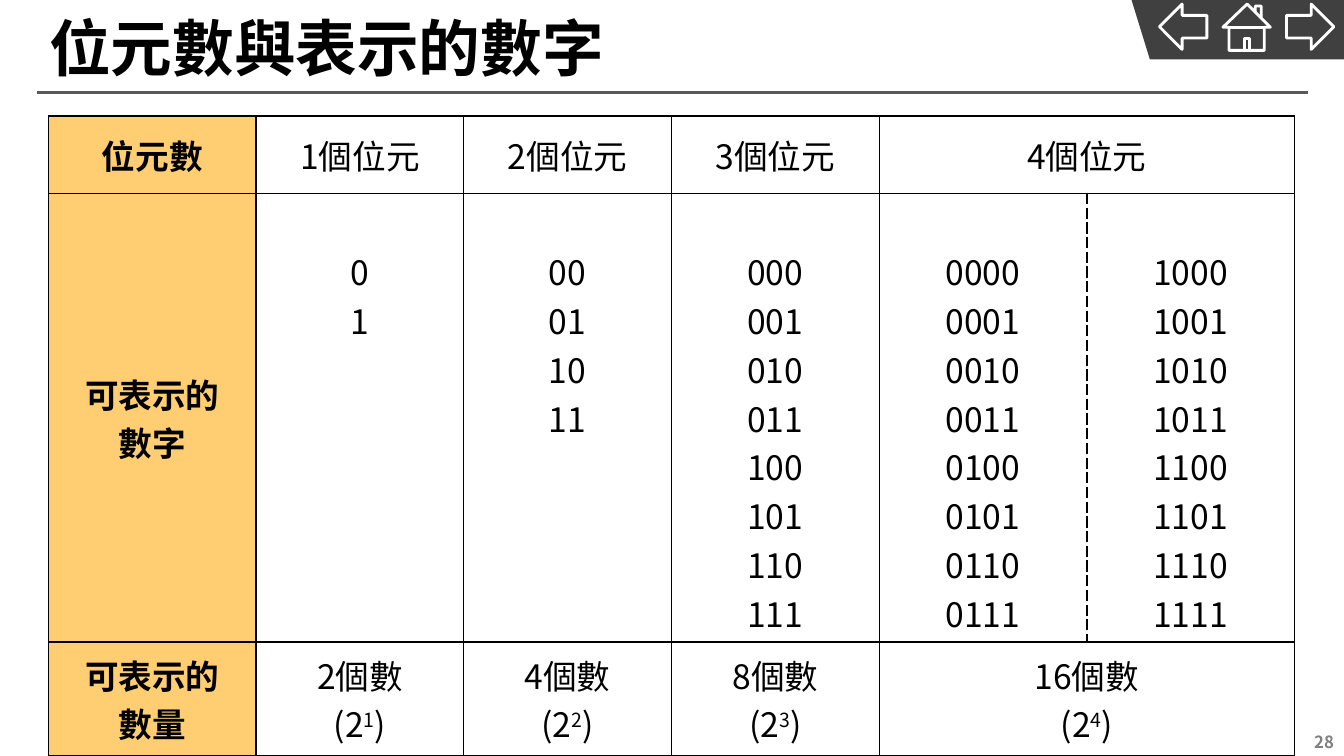
from dataclasses import dataclass

from lxml.etree import SubElement
from pptx import Presentation
from pptx.dml.color import RGBColor
from pptx.enum.shapes import MSO_CONNECTOR, MSO_SHAPE
from pptx.enum.text import MSO_ANCHOR, PP_ALIGN
from pptx.oxml import parse_xml
from pptx.oxml.ns import nsdecls, qn
from pptx.util import Inches, Pt


@dataclass(frozen=True)
class Theme:
    font: str = "Noto Sans CJK SC"
    page_font: str = "Noto Sans CJK TC"
    ink: str = "000000"
    paper: str = "FFFFFF"
    head: str = "FFCE72"
    bar: str = "404040"
    rule: str = "595959"
    page: str = "7F7F7F"
    title_size: int = 44
    cell_size: int = 24
    page_size: int = 12


THEME = Theme()


def rgb(code):
    return RGBColor.from_string(code)


def style(frame, size, color, bold=False, align=PP_ALIGN.LEFT, font=THEME.font):
    """Format every run in a text frame, for Latin and East Asian text."""
    for para in frame.paragraphs:
        para.alignment = align
        for run in para.runs:
            run.font.size = Pt(size)
            run.font.bold = bold
            run.font.color.rgb = rgb(color)
            run.font.name = font
            if run.font._element.find(qn("a:ea")) is None:
                SubElement(run.font._element, qn("a:ea")).set("typeface", font)


def add_text(slide, box, text, inset=0.1, **look):
    shape = slide.shapes.add_textbox(*map(Inches, box))
    frame = shape.text_frame
    frame.word_wrap = True
    frame.vertical_anchor = MSO_ANCHOR.MIDDLE
    frame.margin_left = frame.margin_right = Inches(inset)
    frame.text = text
    style(frame, **look)


def outline(shape):
    shape.shadow.inherit = False
    shape.fill.background()
    shape.line.color.rgb = rgb(THEME.paper)
    shape.line.width = Pt(2)


def add_house(slide):
    """Draw the home icon, with points in hundredths of an inch."""
    walls = [(1237, 4), (1245, 12), (1245, 6), (1251, 6), (1251, 18),
             (1260, 27), (1254, 27), (1254, 50), (1219, 50), (1219, 27),
             (1213, 27)]
    door = [(1234, 50), (1234, 38), (1239, 38), (1239, 50)]
    details = [door, [(1245, 12), (1251, 18)], [(1254, 27), (1219, 27)]]
    path = slide.shapes.build_freeform(*walls[0], scale=Inches(0.01))
    path.add_line_segments(walls[1:], close=True)
    for first, *rest in details:
        path.move_to(*first)
        path.add_line_segments(rest, close=False)
    outline(path.convert_to_shape())


def add_nav(slide):
    bar = slide.shapes.add_shape(
        MSO_SHAPE.PARALLELOGRAM, Inches(11.22), Inches(-0.01), Inches(2.29), Inches(0.6))
    bar.adjustments[0] = 0.308
    bar.rotation = 180
    bar._element.spPr.find(qn("a:xfrm")).set("flipV", "1")
    bar.shadow.inherit = False
    bar.fill.solid()
    bar.fill.fore_color.rgb = rgb(THEME.bar)
    bar.line.fill.background()
    for kind, left in ((MSO_SHAPE.LEFT_ARROW, 11.5), (MSO_SHAPE.RIGHT_ARROW, 12.76)):
        outline(slide.shapes.add_shape(
            kind, Inches(left), Inches(0.04), Inches(0.47), Inches(0.45)))
    add_house(slide)


def add_rule(slide):
    line = slide.shapes.add_connector(
        MSO_CONNECTOR.STRAIGHT, Inches(0.37), Inches(0.92), Inches(12.97), Inches(0.92))
    line.line.color.rgb = rgb(THEME.rule)
    line.line.width = Pt(2.25)
    SubElement(line._element.spPr, qn("a:effectLst"))


def set_edges(cell, dashed=None):
    """Give a cell thin borders, with one side dashed if named."""
    props = cell._tc.get_or_add_tcPr()
    for spot, side in enumerate("LRTB"):
        width, dash = (Pt(1.5), "sysDash") if side == dashed else (Pt(1), "solid")
        props.insert(spot, parse_xml(
            f'<a:ln{side} {nsdecls("a")} w="{width}"><a:solidFill>'
            f'<a:srgbClr val="{THEME.ink}"/></a:solidFill>'
            f'<a:prstDash val="{dash}"/></a:ln{side}>'))


def fill_cell(cell, text, head=False, anchor=MSO_ANCHOR.MIDDLE, dashed=None):
    cell.fill.solid()
    cell.fill.fore_color.rgb = rgb(THEME.head if head else THEME.paper)
    set_edges(cell, dashed)
    cell.vertical_anchor = anchor
    cell.text_frame.text = text
    style(cell.text_frame, THEME.cell_size, THEME.ink, head, PP_ALIGN.CENTER)


def add_power(cell, bits):
    """Add a line that shows two raised to the number of bits."""
    para = cell.text_frame.add_paragraph()
    for part in ("(2", str(bits), ")"):
        para.add_run().text = part
    style(cell.text_frame, THEME.cell_size, THEME.ink, align=PP_ALIGN.CENTER)
    para.runs[1].font._element.set("baseline", "30000")


def add_grid(slide):
    frame = slide.shapes.add_table(
        3, 6, Inches(0.48), Inches(1.15), Inches(12.36), Inches(6.35))
    table = frame.table
    table.first_row = table.horz_banding = False
    for row, height in zip(table.rows, (0.77, 4.45, 1.13)):
        row.height = Inches(height)
    for row in (0, 2):
        table.cell(row, 4).merge(table.cell(row, 5))
        set_edges(table.cell(row, 5))
    for row, label in enumerate(("位元數", "可表示的\n數字", "可表示的\n數量")):
        fill_cell(table.cell(row, 0), label, head=True)
    for bits in range(1, 5):
        fill_cell(table.cell(0, bits), f"{bits}個位元")
        fill_cell(table.cell(2, bits), f"{2 ** bits}個數")
        add_power(table.cell(2, bits), bits)
        codes = [f"{n:0{bits}b}" for n in range(2 ** bits)]
        for start in range(0, len(codes), 8):
            col = bits + start // 8
            cell = table.cell(1, col)
            fill_cell(cell, "\n".join(codes[start:start + 8]),
                      anchor=MSO_ANCHOR.TOP, dashed={4: "R", 5: "L"}.get(col))
            cell.margin_top = Inches(0.53)


def main():
    deck = Presentation()
    deck.slide_width, deck.slide_height = Inches(13.33), Inches(7.5)
    slide = deck.slides.add_slide(deck.slide_layouts[6])
    add_nav(slide)
    add_rule(slide)
    add_text(slide, (0.36, 0, 10.87, 0.92), "位元數與表示的數字", inset=0.13,
             size=THEME.title_size, color=THEME.ink, bold=True)
    add_text(slide, (12.9, 7.22, 0.43, 0.28), "28", size=THEME.page_size,
             color=THEME.page, bold=True, align=PP_ALIGN.RIGHT, font=THEME.page_font)
    add_grid(slide)
    deck.save("out.pptx")


if __name__ == "__main__":
    main()
